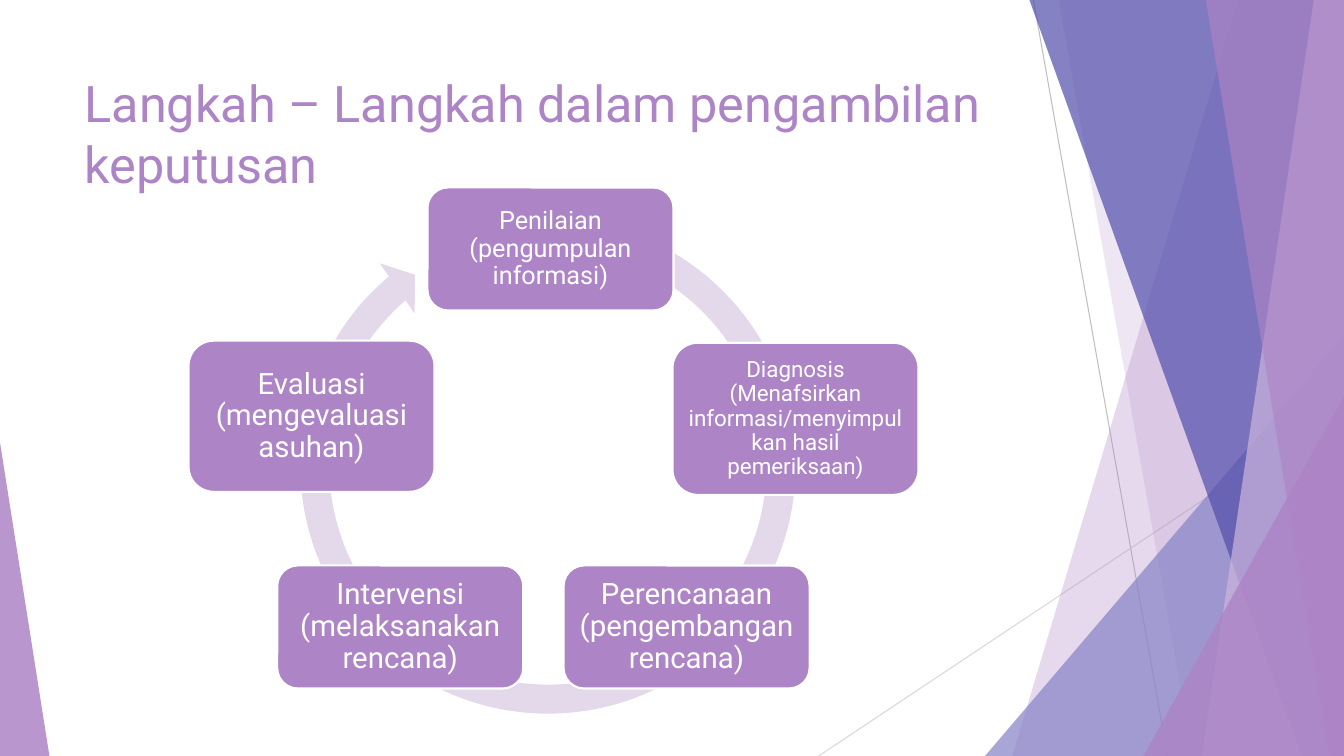
"""Build a slide showing the five-step decision-making cycle."""
from lxml import etree
from pptx import Presentation
from pptx.dml.color import RGBColor
from pptx.enum.shapes import MSO_CONNECTOR, MSO_SHAPE
from pptx.enum.text import MSO_ANCHOR, PP_ALIGN
from pptx.oxml.ns import qn
from pptx.util import Inches, Pt

STRAIGHT = MSO_CONNECTOR.STRAIGHT
TRIANGLE = MSO_SHAPE.ISOSCELES_TRIANGLE
ROUNDED = MSO_SHAPE.ROUNDED_RECTANGLE
CIRCULAR_ARROW = MSO_SHAPE.CIRCULAR_ARROW
TOP, MIDDLE = MSO_ANCHOR.TOP, MSO_ANCHOR.MIDDLE
LEFT, CENTER = PP_ALIGN.LEFT, PP_ALIGN.CENTER

WIDTH, HEIGHT = 13.33, 7.5
THEME = {
    "font": "Roboto",
    "purple": "AD84C6",
    "lilac": "CEB5DD",
    "periwinkle": "8784C7",
    "indigo": "524EAB",
    "ring": "E3D9EA",
    "white": "FFFFFF",
    "gray": "BFBFBF",
    "light_gray": "D9D9D9",
    "title": 36,
    "large": 21,
    "medium": 18,
    "small": 16,
}

TITLE = "Langkah – Langkah dalam pengambilan keputusan"
TITLE_BOX = (0.74, 0.67, 9.4, 1.44)
STEP_WIDTH = 2.44
STEPS = [
    ("Penilaian (pengumpulan informasi)", 4.24, 1.86, 1.22, "medium", 0.07),
    ("Diagnosis (Menafsirkan informasi/menyimpulkan hasil pemeriksaan)",
     6.67, 3.4, 1.51, "small", 0.07),
    ("Perencanaan (pengembangan rencana)", 5.59, 5.61, 1.22, "large", 0.09),
    ("Intervensi (melaksanakan rencana)", 2.75, 5.61, 1.22, "large", 0.09),
    ("Evaluasi (mengevaluasi asuhan)", 1.87, 3.38, 1.5, "large", 0.09),
]
RING_BOX = (2.82, 2.01, 5.23, 5.23)
RING_ADJUSTMENTS = (0.055, 3.307, 137.827, 173.818, 0.058)

BACK_LINES = [
    ((10.25, 0), (11.58, HEIGHT), "gray"),
    ((WIDTH, 4.03), (8.12, HEIGHT), "light_gray"),
]
BANDS_BEHIND = [(12.28, 10.04, "purple", 30), (10.5, 11.83, "purple", 20)]
BANDS_FRONT = [
    (10.21, 12.91, "indigo", 70),
    (13.03, 11.92, "lilac", 70),
    (11.96, 13.18, "purple", 65),
]
CORNER_BEHIND = [(9.77, 3.33, 3.56, 1, "periwinkle", 72)]
CORNERS_FRONT = [(11.34, 3.93, 1.99, 1, "purple", 80), (0, 4.39, 0.49, 0, "purple", 85)]


def color(name):
    return RGBColor.from_string(THEME[name])


def paint(shape, fill, opacity=100, line=None):
    shape.shadow.inherit = False
    shape.fill.solid()
    shape.fill.fore_color.rgb = color(fill)
    if opacity < 100:
        fill_color = shape.fill._xPr.find(qn("a:solidFill"))[0]
        etree.SubElement(fill_color, qn("a:alpha"), val=str(opacity * 1000))
    if line:
        shape.line.color.rgb = color(line)
        shape.line.width = Pt(1.5)
    else:
        shape.line.fill.background()


def add_preset(slide, kind, box, adjustments=(), **paint_format):
    shape = slide.shapes.add_shape(kind, *map(Inches, box))
    for index, value in enumerate(adjustments):
        shape.adjustments[index] = value
    paint(shape, **paint_format)
    return shape


def write_text(shape, text, *, size, ink, align=LEFT, anchor=TOP,
               margins=(0.1, 0.05), spacing=None):
    frame = shape.text_frame
    frame.word_wrap = True
    frame.vertical_anchor = anchor
    frame.margin_left = frame.margin_right = Inches(margins[0])
    frame.margin_top = frame.margin_bottom = Inches(margins[1])
    paragraph = frame.paragraphs[0]
    paragraph.alignment = align
    if spacing:
        paragraph.line_spacing = spacing
    run = paragraph.add_run()
    run.text = text
    run.font.name = THEME["font"]
    run.font.size = Pt(THEME[size])
    run.font.color.rgb = color(ink)


def add_back_lines(slide):
    for start, end, ink in BACK_LINES:
        connector = slide.shapes.add_connector(STRAIGHT, *map(Inches, start + end))
        connector.line.color.rgb = color(ink)
        connector.line.width = Pt(0.75)
        etree.SubElement(connector._element.spPr, qn("a:effectLst"))


def add_bands(slide, bands):
    for top_x, bottom_x, fill, opacity in bands:
        corners = [(WIDTH, 0), (WIDTH, HEIGHT), (bottom_x, HEIGHT)]
        builder = slide.shapes.build_freeform(Inches(top_x), 0)
        builder.add_line_segments([(Inches(x), Inches(y)) for x, y in corners])
        paint(builder.convert_to_shape(), fill, opacity)


def add_corners(slide, corners):
    for left, top, width, apex, fill, opacity in corners:
        add_preset(slide, TRIANGLE, (left, top, width, HEIGHT - top), (apex,),
                   fill=fill, opacity=opacity)


def add_cycle(slide):
    add_preset(slide, CIRCULAR_ARROW, RING_BOX, RING_ADJUSTMENTS, fill="ring")
    for text, left, top, height, size, margin in STEPS:
        step = add_preset(slide, ROUNDED, (left, top, STEP_WIDTH, height),
                          fill="purple", line="white")
        write_text(step, text, size=size, ink="white", align=CENTER, anchor=MIDDLE,
                   margins=(margin, margin), spacing=0.9)


def main():
    presentation = Presentation()
    presentation.slide_width = Inches(WIDTH)
    presentation.slide_height = Inches(HEIGHT)
    slide = presentation.slides.add_slide(presentation.slide_layouts[6])
    add_back_lines(slide)
    add_bands(slide, BANDS_BEHIND)
    add_corners(slide, CORNER_BEHIND)
    add_bands(slide, BANDS_FRONT)
    add_corners(slide, CORNERS_FRONT)
    add_cycle(slide)
    title = slide.shapes.add_textbox(*map(Inches, TITLE_BOX))
    write_text(title, TITLE, size="title", ink="purple")
    presentation.save("out.pptx")


if __name__ == "__main__":
    main()
